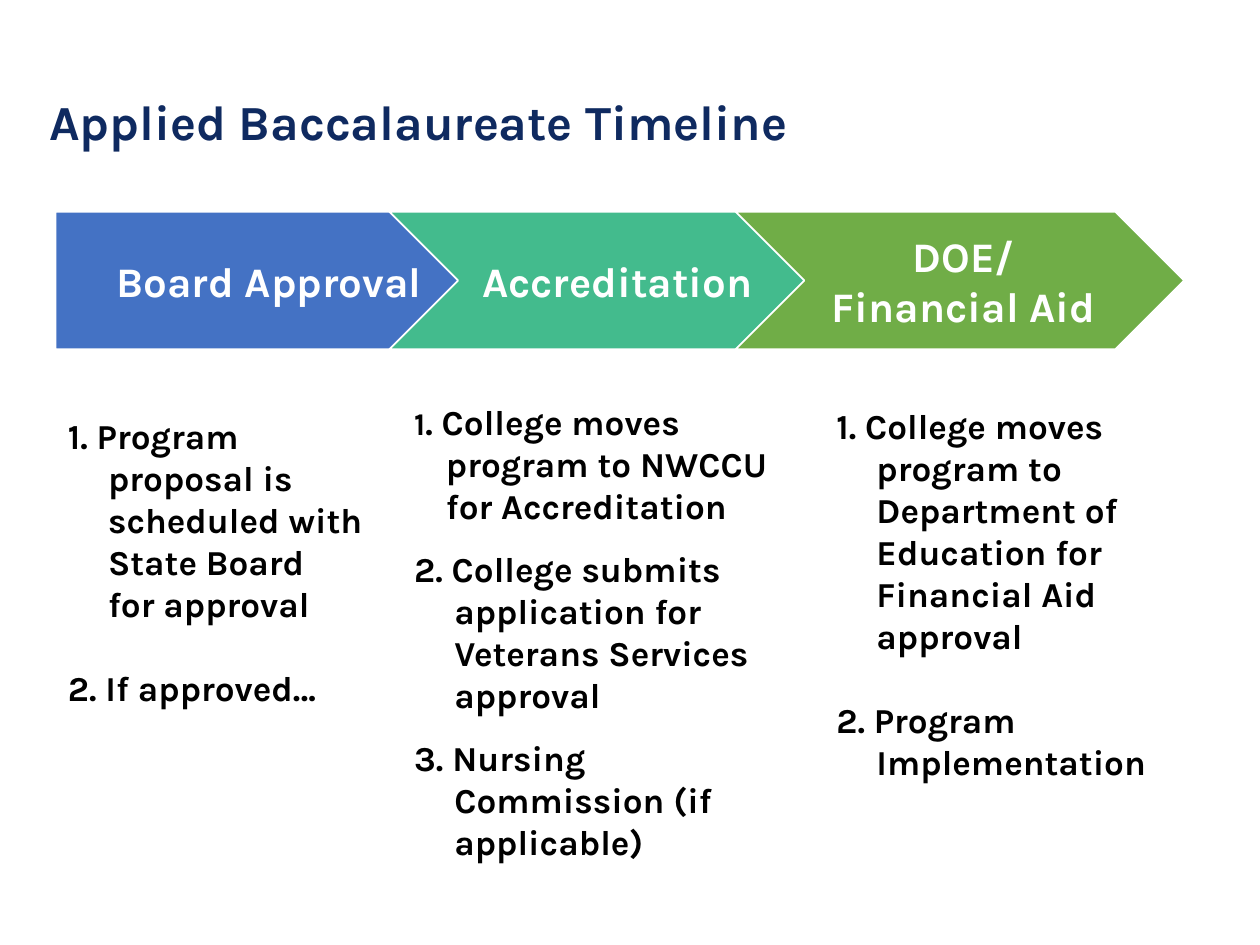
import pptx
import pptx.dml.color
import pptx.enum.shapes
import pptx.enum.text
import pptx.util

Cm = pptx.util.Cm
Pt = pptx.util.Pt
SHAPES = pptx.enum.shapes.MSO_SHAPE
TEXT = pptx.enum.text

STEPS = [
    (SHAPES.PENTAGON, 1.12, "Board Approval", "4472C4", 0.36),
    (SHAPES.CHEVRON, 7.85, "Accreditation", "43BB8D", 0.25),
    (SHAPES.CHEVRON, 14.83, "DOE/ Financial Aid", "70AD47", 0.25),
]

APPROVAL = ["Program proposal is scheduled with State Board \vfor approval",
            "If approved…"]
ACCREDITATION = ["College moves program to NWCCU for Accreditation",
                 "College submits application for Veterans Services approval",
                 "Nursing Commission (if applicable)"]
FINANCIAL_AID = ["College moves program to Department of Education for "
                 "Financial Aid approval",
                 "Program Implementation"]


def color(hex_value):
    return pptx.dml.color.RGBColor.from_string(hex_value)


def format_runs(para, size, hex_value):
    for span in para.runs:
        span.font.name = "Karla"
        span.font.size = Pt(size)
        span.font.bold = True
        span.font.color.rgb = color(hex_value)


def set_title(page, text):
    title = page.shapes.title
    title.left, title.top = Cm(0.74), Cm(1.85)
    title.width, title.height = Cm(23.93), Cm(16.36)
    frame = title.text_frame
    frame.text = text
    frame.auto_size = TEXT.MSO_AUTO_SIZE.NONE
    frame.vertical_anchor = TEXT.MSO_ANCHOR.TOP
    para = frame.paragraphs[0]
    para.alignment = TEXT.PP_ALIGN.LEFT
    para.line_spacing = 0.9
    para.space_before = Pt(10)
    format_runs(para, 28, "0F2A60")


def add_step(page, kind, left, text, fill, left_margin):
    arrow = page.shapes.add_shape(kind, Cm(left), Cm(4.27), Cm(9.04), Cm(2.77))
    arrow.shadow.inherit = False
    arrow.fill.solid()
    arrow.fill.fore_color.rgb = color(fill)
    arrow.line.color.rgb = color("FFFFFF")
    arrow.line.width = Pt(1)
    frame = arrow.text_frame
    frame.text = text
    frame.word_wrap = True
    frame.vertical_anchor = TEXT.MSO_ANCHOR.MIDDLE
    frame.margin_left, frame.margin_right = Cm(left_margin), Cm(0.1)
    frame.margin_top = frame.margin_bottom = Cm(0.18)
    para = frame.paragraphs[0]
    para.alignment = TEXT.PP_ALIGN.CENTER
    format_runs(para, 24, "FFFFFF")


def set_hanging_indent(para, indent):
    properties = para._p.get_or_add_pPr()
    properties.set("marL", str(Cm(indent)))
    properties.set("indent", str(-Cm(indent)))


def add_numbered_list(page, left, top, width, height, items, gap,
                      first_indent=0.81, first_number_size=20):
    box = page.shapes.add_textbox(Cm(left), Cm(top), Cm(width), Cm(height))
    frame = box.text_frame
    frame.word_wrap = True
    for number, item in enumerate(items, start=1):
        para = frame.paragraphs[0] if number == 1 else frame.add_paragraph()
        para.text = f"{number}. {item}"
        para.space_after = Pt(gap)
        set_hanging_indent(para, first_indent if number == 1 else 0.81)
        format_runs(para, 20, "000000")
    if first_number_size != 20:
        para = frame.paragraphs[0]
        para.text = "1"
        para.add_run().text = f". {items[0]}"
        format_runs(para, 20, "000000")
        para.runs[0].font.size = Pt(first_number_size)


def main():
    deck = pptx.Presentation()
    deck.slide_width, deck.slide_height = Cm(25.4), Cm(19.05)
    page = deck.slides.add_slide(deck.slide_layouts.get_by_name("Title Only"))
    set_title(page, "Applied Baccalaureate Timeline")
    for step in STEPS:
        add_step(page, *step)
    add_numbered_list(page, 1.12, 8.23, 6.78, 5.87, APPROVAL, gap=24)
    add_numbered_list(page, 8.1, 7.95, 7.98, 8.81, ACCREDITATION, gap=12,
                      first_indent=0.64, first_number_size=18)
    add_numbered_list(page, 16.61, 8.03, 7.54, 10.19, FINANCIAL_AID, gap=24)
    deck.save("out.pptx")


if __name__ == "__main__":
    main()
